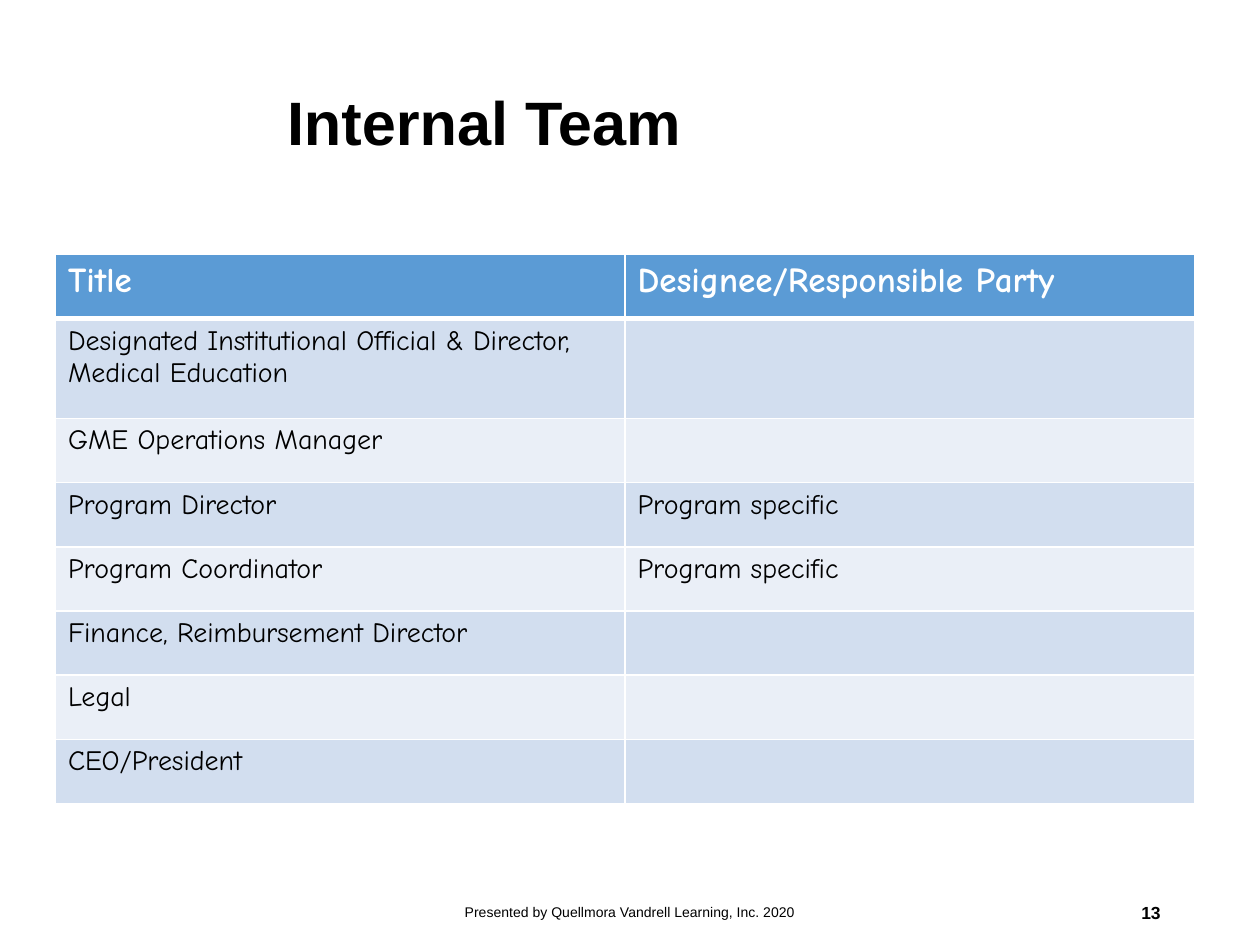
import pptx
import pptx.dml.color
import pptx.enum.text
import pptx.oxml
import pptx.oxml.ns
import pptx.util

Inches = pptx.util.Inches
Pt = pptx.util.Pt
Align = pptx.enum.text.PP_ALIGN
Anchor = pptx.enum.text.MSO_ANCHOR

# Content
TITLE = "Internal Team"
FOOTER = "Presented by Quellmora Vandrell Learning, Inc. 2020"
PAGE_NUMBER = "13"
ROWS = [
    ("Title", "Designee/Responsible Party"),
    ("Designated Institutional Official & Director, Medical Education", ""),
    ("GME Operations Manager", ""),
    ("Program Director", "Program specific"),
    ("Program Coordinator", "Program specific"),
    ("Finance, Reimbursement Director", ""),
    ("Legal", ""),
    ("CEO/President", ""),
]

THEME = {
    "font": "Arial", "table_font": "Comic Neue",
    "ink": "000000", "white": "FFFFFF", "header": "5B9BD5",
    "bands": ("D2DEEF", "EAEFF7"),
    "title": 35, "footer": 8, "number": 10, "head": 20, "body": 16,
}
ROW_HEIGHT, TALL_ROW_HEIGHT, COLUMN_WIDTH = 0.51, 0.79, 4.52
THIN, THICK = 1, 3


def color(name):
    return pptx.dml.color.RGBColor.from_string(name)


def add_span(para, text, size, font, ink, bold=False):
    span = para.add_run()
    span.text = text
    span.font.size = Pt(size)
    span.font.name = font
    span.font.bold = bold
    span.font.color.rgb = color(ink)


def add_text(page, place, text, size, align, bold=False, spacing=1.0):
    box = page.shapes.add_textbox(*map(Inches, place))
    frame = box.text_frame
    frame.word_wrap = True
    frame.vertical_anchor = Anchor.MIDDLE
    para = frame.paragraphs[0]
    para.alignment = align
    para.line_spacing = spacing
    add_span(para, text, size, THEME["font"], THEME["ink"], bold)


def set_borders(cell, top, bottom):
    properties = cell._tc.get_or_add_tcPr()
    widths = {"lnL": THIN, "lnR": THIN, "lnT": top, "lnB": bottom}
    for index, (side, width) in enumerate(widths.items()):
        properties.insert(index, pptx.oxml.parse_xml(
            f'<a:{side} {pptx.oxml.ns.nsdecls("a")} w="{Pt(width)}"><a:solidFill>'
            f'<a:srgbClr val="{THEME["white"]}"/></a:solidFill></a:{side}>'))


def add_team_table(page):
    columns = len(ROWS[0])
    heights = [ROW_HEIGHT] * len(ROWS)
    heights[1] = TALL_ROW_HEIGHT
    table = page.shapes.add_table(
        len(ROWS), columns, Inches(0.44), Inches(2.02),
        Inches(COLUMN_WIDTH * columns), Inches(sum(heights))).table
    for column in table.columns:
        column.width = Inches(COLUMN_WIDTH)
    for index, (texts, height) in enumerate(zip(ROWS, heights)):
        header = index == 0
        table.rows[index].height = Inches(height)
        fill = THEME["header"] if header else THEME["bands"][(index - 1) % 2]
        size = THEME["head" if header else "body"]
        ink = THEME["white" if header else "ink"]
        for cell, text in zip(table.rows[index].cells, texts):
            cell.fill.solid()
            cell.fill.fore_color.rgb = color(fill)
            set_borders(cell, THICK if index == 1 else THIN, THICK if header else THIN)
            para = cell.text_frame.paragraphs[0]
            para.font.size = Pt(size)
            if text:
                add_span(para, text, size, THEME["table_font"], ink, header)


def main():
    deck = pptx.Presentation()
    deck.slide_width, deck.slide_height = Inches(10), Inches(7.5)
    page = deck.slides.add_slide(deck.slide_layouts[6])

    # Title
    add_text(page, (2.18, 0.27, 7.14, 1.45), TITLE, THEME["title"], Align.LEFT, True, 0.9)
    # Footer and page number
    add_text(page, (3.31, 7.04, 3.38, 0.4), FOOTER, THEME["footer"], Align.CENTER)
    add_text(page, (7.06, 7.04, 2.25, 0.4), PAGE_NUMBER, THEME["number"], Align.RIGHT, True)
    # Team table
    add_team_table(page)

    deck.save("out.pptx")


if __name__ == "__main__":
    main()
